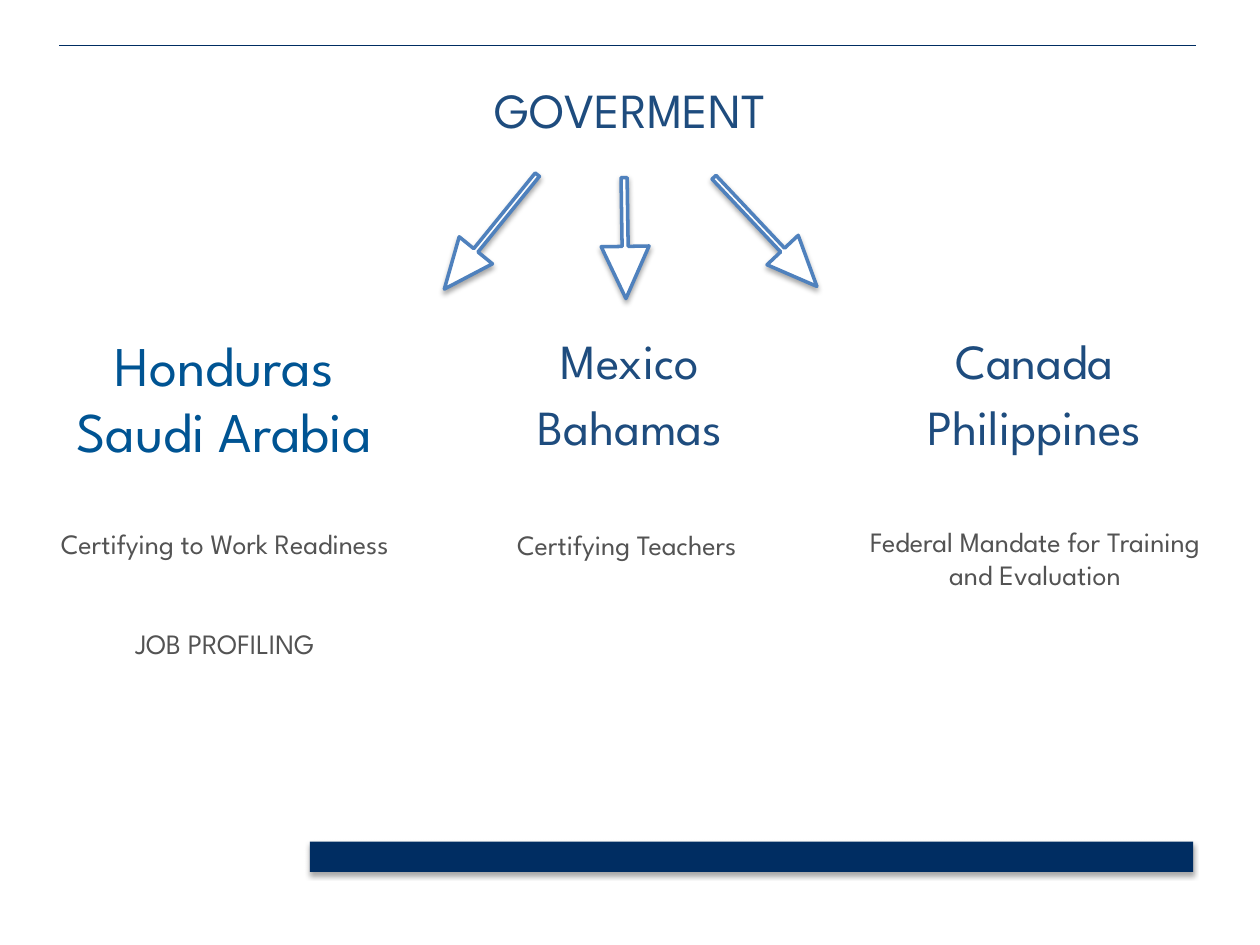
from lxml import etree
from pptx import Presentation
from pptx.dml.color import RGBColor
from pptx.enum import shapes, text
from pptx.oxml import parse_xml
from pptx.oxml.ns import nsdecls, qn
from pptx.util import Inches, Pt

NAVY = RGBColor(0x00, 0x2D, 0x62)
BLUE = RGBColor(0x1E, 0x4C, 0x7E)
BRIGHT_BLUE = RGBColor(0x00, 0x54, 0x93)
ARROW_BLUE = RGBColor(0x4F, 0x81, 0xBD)
GRAY = RGBColor(0x53, 0x53, 0x53)
WHITE = RGBColor(0xFF, 0xFF, 0xFF)
FONT = "League Spartan"

prs = Presentation()
prs.slide_width, prs.slide_height = Inches(10), Inches(7.5)
slide = prs.slides.add_slide(prs.slide_layouts[5])


def write(box, words, size, color):
    frame = box.text_frame
    frame.text = words
    frame.word_wrap = True
    frame.auto_size = text.MSO_AUTO_SIZE.NONE
    frame.vertical_anchor = text.MSO_ANCHOR.TOP
    frame.margin_left = frame.margin_right = frame.margin_top = frame.margin_bottom = 0
    for paragraph in frame.paragraphs:
        paragraph.alignment = text.PP_ALIGN.CENTER
        for run in paragraph.runs:
            run.font.name, run.font.size = FONT, Pt(size)
            run.font.color.rgb = color


def add_shadow(shape):
    shape.shadow.inherit = False
    shape._element.spPr.find(qn("a:effectLst")).append(parse_xml(
        f'<a:outerShdw {nsdecls("a")} blurRad="{Pt(3)}" dist="{Pt(1.8)}" dir="5400000" rotWithShape="0">'
        '<a:srgbClr val="000000"><a:alpha val="35000"/></a:srgbClr></a:outerShdw>'))


# Top rule and bottom bar
rule = slide.shapes.add_connector(
    shapes.MSO_CONNECTOR.STRAIGHT, Inches(0.47), Inches(0.36), Inches(9.49), Inches(0.36))
rule.line.color.rgb, rule.line.width = NAVY, Pt(0.5)
etree.SubElement(rule._element.spPr, qn("a:effectLst"))

bar = slide.shapes.add_shape(
    shapes.MSO_SHAPE.RECTANGLE, Inches(2.46), Inches(6.68), Inches(7.01), Inches(0.24))
bar.fill.solid()
bar.fill.fore_color.rgb = NAVY
bar.line.fill.background()
add_shadow(bar)

# Title
title = slide.shapes.title
title.left, title.top, title.width, title.height = Inches(3.5), Inches(0.63), Inches(3), Inches(0.54)
write(title, "GOVERMENT", 28, BLUE)

# Arrows from the title to the three columns
for left, top, width, height, angle, head in [
    (3.31, 1.67, 1.17, 0.34, 129.1, 1.165),
    (4.48, 1.7, 0.96, 0.38, 89.1, 1.09),
    (5.48, 1.67, 1.19, 0.34, 46.7, 1.165),
]:
    arrow = slide.shapes.add_shape(
        shapes.MSO_SHAPE.RIGHT_ARROW, Inches(left), Inches(top), Inches(width), Inches(height))
    arrow.rotation = angle
    arrow.adjustments[0], arrow.adjustments[1] = 0.126, head
    arrow.fill.solid()
    arrow.fill.fore_color.rgb = WHITE
    arrow.line.color.rgb, arrow.line.width = ARROW_BLUE, Pt(2)
    add_shadow(arrow)

# Columns: two countries above a description
for left, countries, size, color, note_left, note_top, note_height, note in [
    (0.28, ("Honduras", "Saudi Arabia"), 32, BRIGHT_BLUE,
     0.42, 4.18, 2.85, "Certifying to Work Readiness\nJOB PROFILING"),
    (3.5, ("Mexico", "Bahamas"), 28, BLUE,
     3.61, 4.19, 0.85, "Certifying Teachers"),
    (6.71, ("Canada", "Philippines"), 28, BLUE,
     6.85, 4.16, 1.6, "Federal Mandate for Training and Evaluation"),
]:
    for row, country in enumerate(countries):
        name = slide.shapes.add_textbox(
            Inches(left), Inches(2.62 + 0.53 * row), Inches(3), Inches(0.54 if size == 28 else 0.61))
        write(name, country, size, color)
    description = slide.shapes.add_textbox(
        Inches(note_left), Inches(note_top), Inches(2.73), Inches(note_height))
    write(description, note, 16, GRAY)
    for paragraph in description.text_frame.paragraphs[1:]:
        paragraph.space_before = Pt(38)

prs.save("out.pptx")
